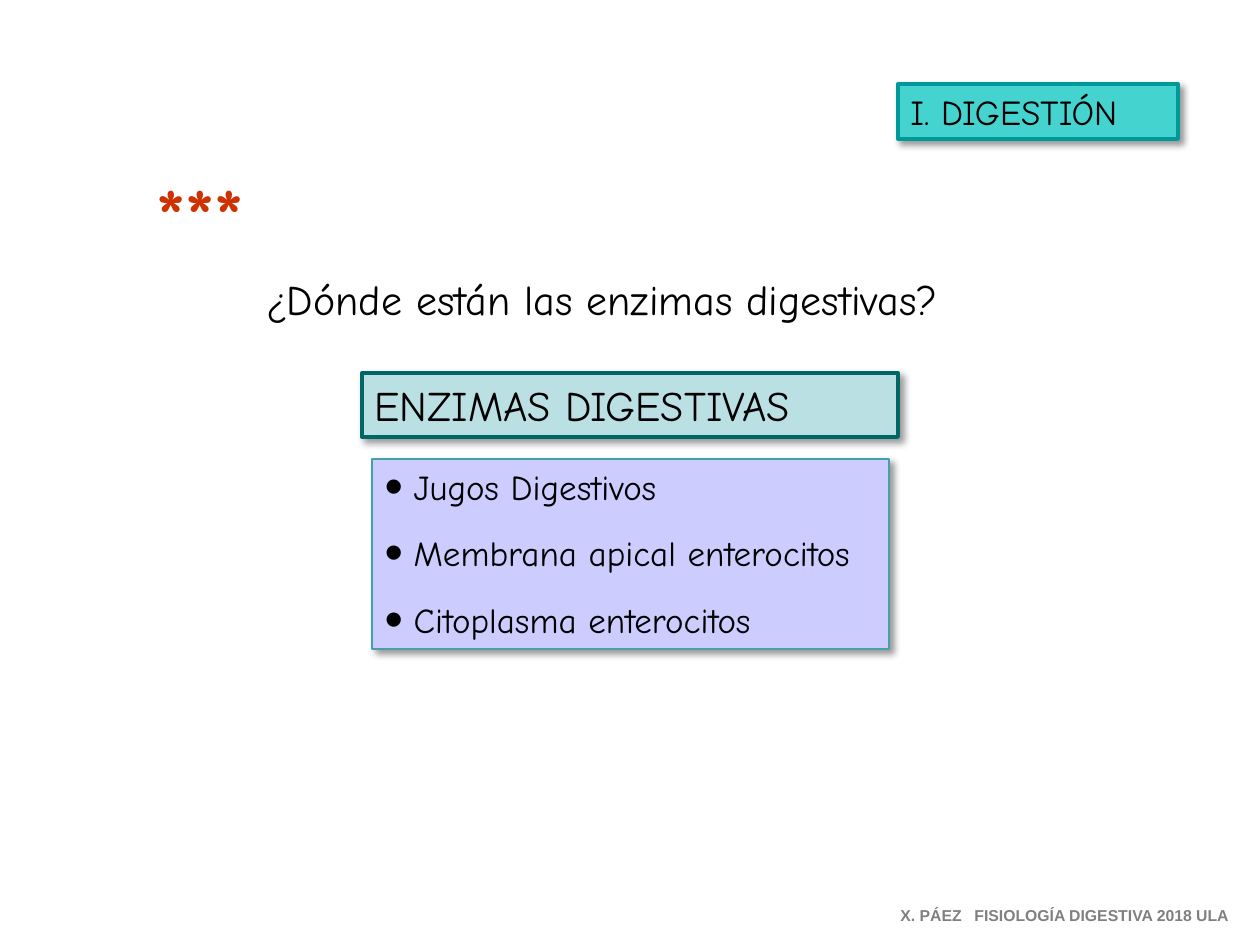
from lxml import etree
from pptx import Presentation
from pptx import util as u
from pptx.dml.color import RGBColor
from pptx.enum import shapes, text
from pptx.oxml import ns

PX = 914400 / 126
COLORS = {
    "ink": "000000", "footer": "808080", "stars": "CC3300",
    "list": "CCCCFF", "list_line": "45A0A7",
    "header": "BBE0E3", "header_line": "006666",
    "section": "45D3D0", "section_line": "009999",
}


def px(n):
    return u.Emu(round(n * PX))


def rgb(name):
    return RGBColor.from_string(COLORS[name])


def add_xml(parent, tag, **attrs):
    return etree.SubElement(parent, ns.qn(tag), {k: str(v) for k, v in attrs.items()})


def add_shadow(effects, blur, dist, alpha):
    shadow = add_xml(effects, "a:outerShdw", blurRad=u.Pt(blur), dist=u.Pt(dist),
                     dir=45 * 60000, algn="tl", rotWithShape=0)
    color = add_xml(shadow, "a:srgbClr", val=COLORS["ink"])
    add_xml(color, "a:alpha", val=alpha * 1000)


class Deck:
    font = "Comic Neue"

    def __init__(self, width, height):
        self.prs = Presentation()
        self.prs.slide_width, self.prs.slide_height = px(width), px(height)
        self.s = self.prs.slides.add_slide(self.prs.slide_layouts[1])

    def place(self, sp, box):
        for name, value in zip(("left", "top", "width", "height"), box):
            setattr(sp, name, px(value))

    def set_text(self, sp, lines, size, color="ink", font=None, bold=False):
        tf = sp.text_frame
        frame = {"word_wrap": True, "auto_size": text.MSO_AUTO_SIZE.NONE,
                 "vertical_anchor": text.MSO_ANCHOR.TOP, "margin_right": 0}
        for name, value in frame.items():
            setattr(tf, name, value)
        style = {"name": font or self.font, "size": u.Pt(size), "bold": bold}
        for i, line in enumerate(lines):
            p = tf.add_paragraph() if i else tf.paragraphs[0]
            p.alignment = text.PP_ALIGN.LEFT
            r = p.add_run()
            r.text = line
            for name, value in style.items():
                setattr(r.font, name, value)
            r.font.color.rgb = rgb(color)
        return tf.paragraphs

    def panel(self, sp, fill, width):
        sp.fill.solid()
        sp.fill.fore_color.rgb = rgb(fill)
        sp.line.color.rgb = rgb(fill + "_line")
        sp.line.width = u.Pt(width)
        sp.shadow.inherit = False
        add_shadow(sp._element.spPr.find(ns.qn("a:effectLst")), 4, 3, 40)

    def title(self, box, line, size):
        sp = self.s.shapes.title
        self.place(sp, box)
        self.set_text(sp, [line], size)

    def bullets(self, box, lines, size, gap, indent, fill):
        sp = self.s.placeholders[1]
        self.place(sp, box)
        self.panel(sp, fill, 0.75)
        for p in self.set_text(sp, lines, size):
            p.space_before, p.space_after = u.Pt(0), u.Pt(gap)
            pPr = p._p.get_or_add_pPr()
            pPr.set("marL", str(px(indent)))
            pPr.set("indent", str(-px(indent)))
            add_xml(pPr, "a:buSzPct", val=150000)
            add_xml(pPr, "a:buFont", typeface="Arial")
            add_xml(pPr, "a:buChar", char="•")

    def label(self, box, line, size, fill):
        sp = self.s.shapes.add_shape(shapes.MSO_SHAPE.RECTANGLE, *map(px, box))
        self.panel(sp, fill, 2.25)
        self.set_text(sp, [line], size)

    def note(self, box, line, size, color, font=None, tab=None, shadow=False):
        sp = self.s.shapes.add_textbox(*map(px, box))
        p = self.set_text(sp, [line], size, color, font, bold=True)[0]
        if tab:
            tabs = add_xml(p._p.get_or_add_pPr(), "a:tabLst")
            add_xml(tabs, "a:tab", pos=px(tab), algn="l")
        if shadow:
            effects = etree.Element(ns.qn("a:effectLst"))
            add_shadow(effects, 0, 3, 100)
            rPr = p.runs[0]._r.get_or_add_rPr()
            rPr.find(ns.qn("a:solidFill")).addnext(effects)


def main():
    deck = Deck(1260, 945)
    deck.title((254, 267, 751, 63), "¿Dónde están las enzimas digestivas?", 24)
    deck.bullets((372, 459, 517, 190),
                 ["Jugos Digestivos", "Membrana apical enterocitos", "Citoplasma enterocitos"],
                 size=20, gap=14, indent=29, fill="list")
    deck.label((362, 373, 536, 64), "ENZIMAS DIGESTIVAS", 24, "header")
    deck.label((898, 84, 280, 55), "I. DIGESTIÓN", 20, "section")
    deck.note((144, 160, 149, 106), "***", 44, "stars", shadow=True)
    deck.note((888, 900, 358, 31), "X. PÁEZ\tFISIOLOGÍA DIGESTIVA 2018 ULA", 9, "footer",
              font="Arial", tab=74)
    deck.prs.save("out.pptx")


if __name__ == "__main__":
    main()
